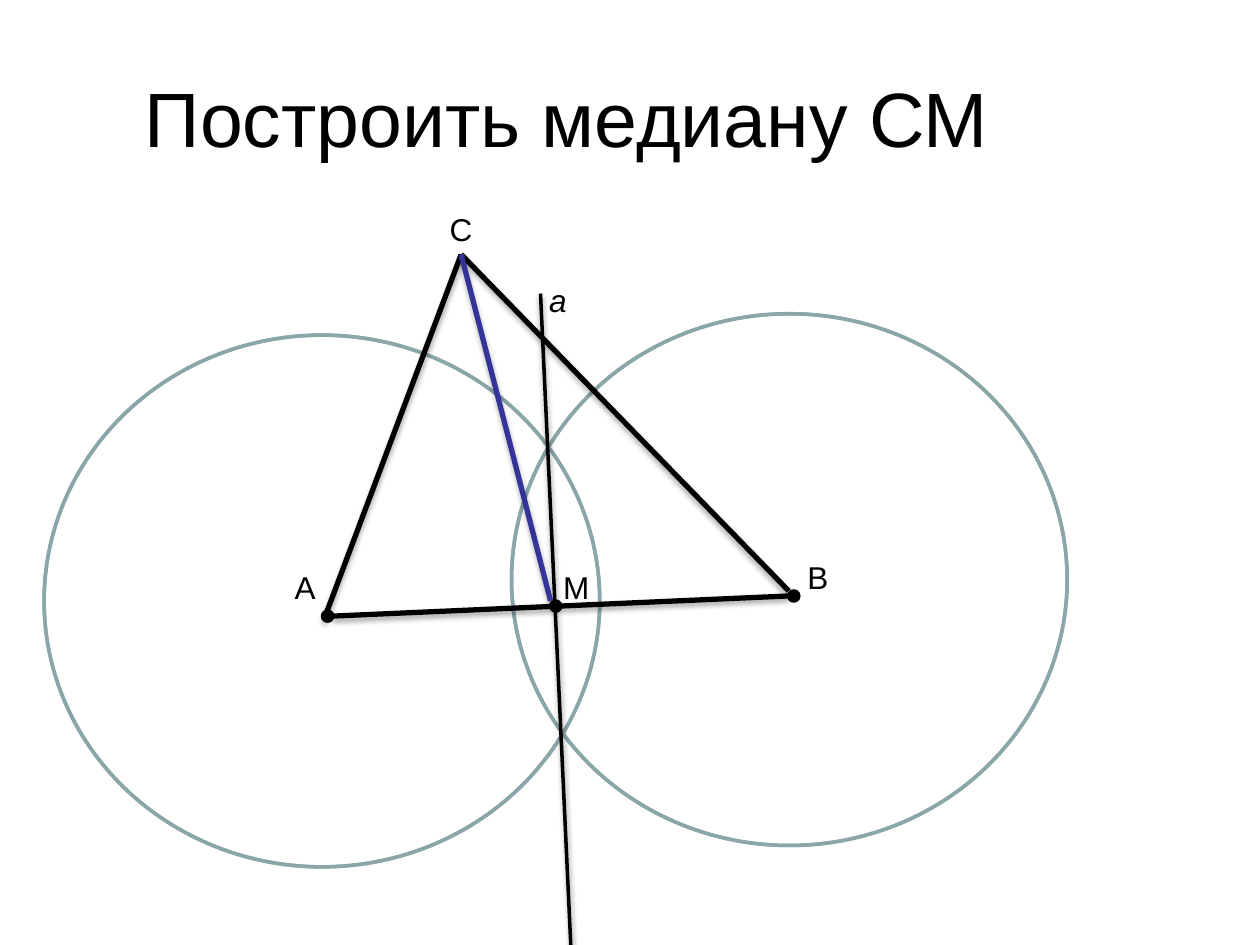
from dataclasses import dataclass

from pptx import Presentation, util as u
from pptx.dml.color import RGBColor
from pptx.enum import shapes, text
from pptx.oxml.ns import qn

CELL = 0.1  # grid of 100 columns by 75 rows, in inches
COLUMNS, ROWS = 100, 75


@dataclass(frozen=True)
class Theme:
    font: str = "Arial"
    ink: RGBColor = RGBColor(0, 0, 0)
    median: RGBColor = RGBColor(0x33, 0x33, 0x99)
    circle_fill: RGBColor = RGBColor(0xBB, 0xE0, 0xE3)
    circle_line: RGBColor = RGBColor(0x8A, 0xA6, 0xA8)
    title_size: int = 44
    label_size: int = 18
    thin: int = 2
    thick: int = 3


THEME = Theme()


def grid(*cells):
    return [u.Inches(cell * CELL) for cell in cells]


def style_text(para, size, italic=None):
    font = para.font
    font.name, font.size, font.italic = THEME.font, u.Pt(size), italic
    font.color.rgb = THEME.ink


def set_title(page, words):
    title = page.shapes.title
    title.left, title.top, title.width, title.height = grid(0, 3, 90, 12.5)
    frame = title.text_frame
    frame.text = words
    frame.vertical_anchor = text.MSO_ANCHOR.MIDDLE
    para = frame.paragraphs[0]
    para.alignment = text.PP_ALIGN.CENTER
    style_text(para, THEME.title_size)


def add_round(page, kind, place, fill, line):
    shape = page.shapes.add_shape(kind, *grid(*place))
    shape.shadow.inherit = False
    shape.fill.solid()
    shape.fill.fore_color.rgb = fill
    shape.line.color.rgb = line
    shape.line.width = u.Pt(THEME.thin)
    return shape


def add_dot(page, left, top):
    add_round(page, shapes.MSO_SHAPE.OVAL, (left, top, 0.8, 0.8), THEME.ink, THEME.ink)


def add_circle(page, left, top):
    ring = add_round(page, shapes.MSO_SHAPE.DONUT, (left, top, 44.1, 42.2),
                     THEME.circle_fill, THEME.circle_line)
    ring.adjustments[0] = 0


def add_line(page, start, end, width=THEME.thick, color=THEME.ink):
    line = page.shapes.add_connector(shapes.MSO_CONNECTOR.STRAIGHT, *grid(*start, *end))
    line.line.color.rgb = color
    line.line.width = u.Pt(width)
    # The theme's second effect is the soft shadow of the thick lines
    effect = line._element.find(".//" + qn("a:effectRef"))
    effect.set("idx", "2" if width == THEME.thick else "1")


def add_label(page, letter, left, top, width=3.4, italic=None):
    box = page.shapes.add_textbox(*grid(left, top, width, 4))
    frame = box.text_frame
    frame.word_wrap = False
    frame.auto_size = text.MSO_AUTO_SIZE.SHAPE_TO_FIT_TEXT
    frame.text = letter
    style_text(frame.paragraphs[0], THEME.label_size, italic)


def main():
    deck = Presentation()
    deck.slide_width, deck.slide_height = grid(COLUMNS, ROWS)
    page = deck.slides.add_slide(deck.slide_layouts[5])
    set_title(page, "Построить медиану СМ")

    # Ends of the base and the equal circles around them
    add_dot(page, 62.6, 46.9)
    add_dot(page, 25.6, 48.5)
    add_circle(page, 40.6, 24.9)
    add_circle(page, 3.5, 26.6)

    # Base, its perpendicular bisector and midpoint
    apex = (36.6, 20.2)
    add_line(page, (26.4, 48.9), (62.6, 47.3))
    add_line(page, (42.9, 23.3), (45.3, ROWS), THEME.thin)
    add_dot(page, 43.7, 47.7)

    # Letters
    add_label(page, "А", 22.4, 44.6)
    add_label(page, "В", 63.1, 43.8)
    add_label(page, "a", 42.6, 21.8, italic=True)
    add_label(page, "М", 43.7, 44.6, width=4.2)
    add_label(page, "С", 34.7, 16.2)

    # Sides and median
    add_line(page, (25.7, 49.2), apex)
    add_line(page, apex, (62.6, 46.9))
    add_line(page, apex, (43.7, 47.7), color=THEME.median)

    deck.save("out.pptx")


if __name__ == "__main__":
    main()
